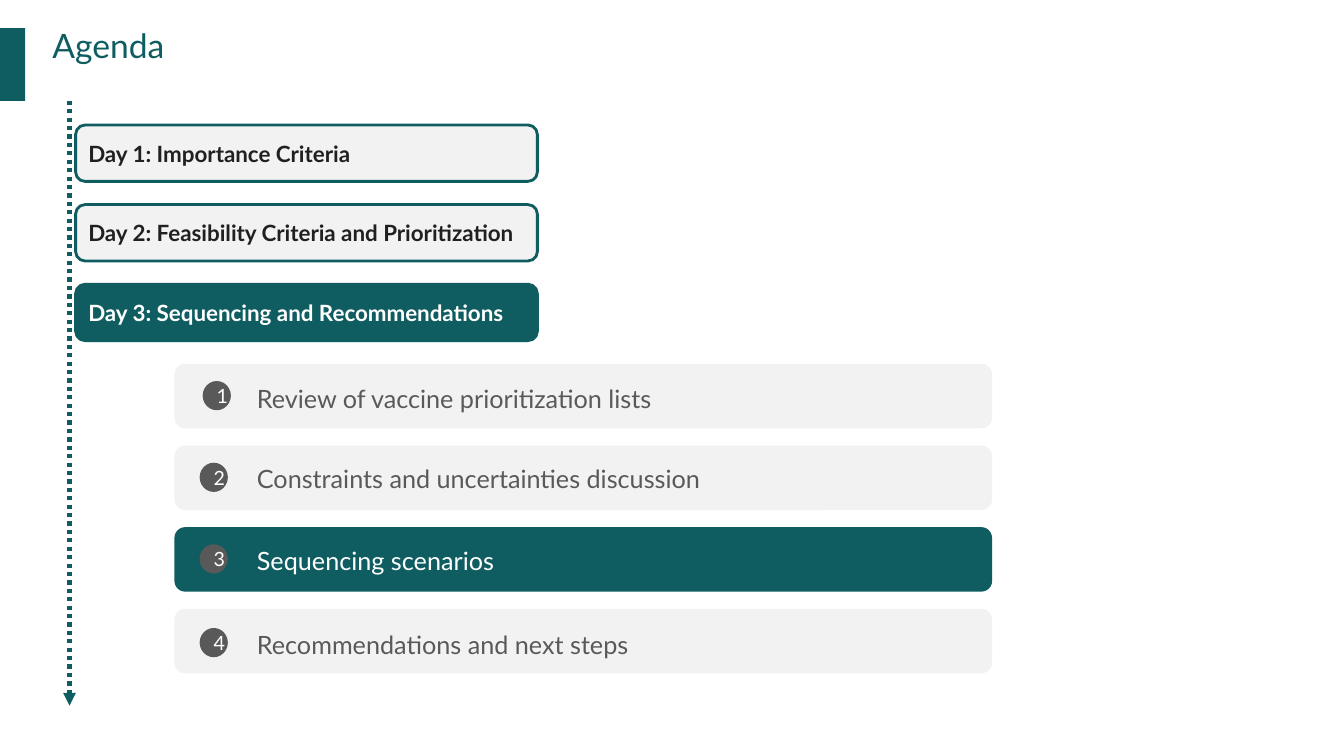
"""Build the agenda slide with three days and the steps of the third day."""
from lxml import etree
from pptx import Presentation
from pptx import util as u
from pptx.dml.color import RGBColor
from pptx.enum import dml, shapes, text
from pptx.oxml.ns import qn

TEAL, PALE, GREY, INK, WHITE = "0F5D61", "F2F2F2", "595959", "202020", "FFFFFF"
FONT = "Lato"
SLIDE_WIDTH, SLIDE_HEIGHT = 13.33, 7.5

TITLE = "Agenda"
DAYS = [
    ("Day 1: Importance Criteria", False),
    ("Day 2: Feasibility Criteria and Prioritization", False),
    ("Day 3: Sequencing and Recommendations", True),
]
# label, active, badge left, badge drop, label drop
STEPS = [
    ("Review of vaccine prioritization lists", False, 2.01, 0.17, 0.14),
    ("Constraints and uncertainties discussion", False, 1.98, 0.17, 0.13),
    ("Sequencing scenarios", True, 1.98, 0.17, 0.13),
    ("Recommendations and next steps", False, 1.98, 0.19, 0.15),
]
DAY_LEFT, DAY_TOP, DAY_WIDTH, DAY_HEIGHT, DAY_PITCH = 0.75, 1.24, 4.58, 0.56, 0.79
STEP_LEFT, STEP_TOP, STEP_WIDTH, STEP_HEIGHT, STEP_PITCH = 1.73, 3.61, 8.11, 0.64, 0.81
LABEL_LEFT, LABEL_WIDTH, LABEL_HEIGHT = 2.45, 7, 0.4
BADGE_WIDTH, BADGE_HEIGHT = 0.28, 0.29
TIMELINE_X, TIMELINE_TOP, TIMELINE_BOTTOM = 0.69, 1, 7


def color(value):
    """Turn a hex string into a colour."""
    return RGBColor.from_string(value)


def write(shape, words, size, ink, bold=False, align=text.PP_ALIGN.LEFT):
    """Put one styled paragraph into a shape."""
    shape.text_frame.word_wrap = True
    paragraph = shape.text_frame.paragraphs[0]
    paragraph.text = words
    paragraph.alignment = align
    paragraph.font.name = FONT
    paragraph.font.size = u.Pt(size)
    paragraph.font.bold = bold
    paragraph.font.color.rgb = color(ink)


def add_box(slide, kind, bounds, fill, outline=None):
    """Add a flat filled shape, outlined on request."""
    shape = slide.shapes.add_shape(kind, *map(u.Inches, bounds))
    shape.shadow.inherit = False
    shape.fill.solid()
    shape.fill.fore_color.rgb = color(fill)
    if outline:
        shape.line.color.rgb = color(outline)
        shape.line.width = u.Pt(2)
    else:
        shape.line.fill.background()
    shape.text_frame.vertical_anchor = text.MSO_ANCHOR.MIDDLE
    return shape


def add_label(slide, bounds, words, size, ink):
    """Add a text box and return it."""
    label = slide.shapes.add_textbox(*map(u.Inches, bounds))
    write(label, words, size, ink)
    return label


def add_timeline(slide):
    """Add the dotted arrow that runs down the slide."""
    ends = (TIMELINE_X, TIMELINE_TOP, TIMELINE_X, TIMELINE_BOTTOM)
    arrow = slide.shapes.add_connector(shapes.MSO_CONNECTOR.STRAIGHT, *map(u.Inches, ends))
    arrow.line.color.rgb = color(TEAL)
    arrow.line.width = u.Pt(3)
    arrow.line.dash_style = dml.MSO_LINE.ROUND_DOT
    properties = arrow.element.spPr
    etree.SubElement(properties.find(qn("a:ln")), qn("a:tailEnd"), type="triangle")
    etree.SubElement(properties, qn("a:effectLst"))


def add_day(slide, row, words, active):
    """Add the bar of one day."""
    bounds = (DAY_LEFT, DAY_TOP + row * DAY_PITCH, DAY_WIDTH, DAY_HEIGHT)
    bar = add_box(slide, shapes.MSO_SHAPE.ROUNDED_RECTANGLE, bounds, TEAL if active else PALE, TEAL)
    write(bar, words, 16, WHITE if active else INK, bold=True)


def add_step(slide, row, words, active, badge_left, badge_drop, label_drop):
    """Add the bar, numbered badge and label of one step."""
    top = STEP_TOP + row * STEP_PITCH
    add_box(slide, shapes.MSO_SHAPE.ROUNDED_RECTANGLE,
            (STEP_LEFT, top, STEP_WIDTH, STEP_HEIGHT), TEAL if active else PALE)
    badge = add_box(slide, shapes.MSO_SHAPE.OVAL,
                    (badge_left, top + badge_drop, BADGE_WIDTH, BADGE_HEIGHT), GREY)
    write(badge, str(row + 1), 14, WHITE, align=text.PP_ALIGN.CENTER)
    add_label(slide, (LABEL_LEFT, top + label_drop, LABEL_WIDTH, LABEL_HEIGHT),
              words, 18, WHITE if active else GREY)


def main():
    """Build and save the slide."""
    presentation = Presentation()
    presentation.slide_width = u.Inches(SLIDE_WIDTH)
    presentation.slide_height = u.Inches(SLIDE_HEIGHT)
    slide = presentation.slides.add_slide(presentation.slide_layouts[6])

    add_box(slide, shapes.MSO_SHAPE.RECTANGLE, (-0.01, 0.28, 0.26, 0.72), TEAL)
    frame = add_label(slide, (0.52, 0.25, 12.55, 0.8), TITLE, 24, TEAL).text_frame
    frame.margin_left = frame.margin_top = frame.margin_right = frame.margin_bottom = 0
    add_timeline(slide)
    for row, day in enumerate(DAYS):
        add_day(slide, row, *day)
    for row, step in enumerate(STEPS):
        add_step(slide, row, *step)

    presentation.save("out.pptx")


if __name__ == "__main__":
    main()
